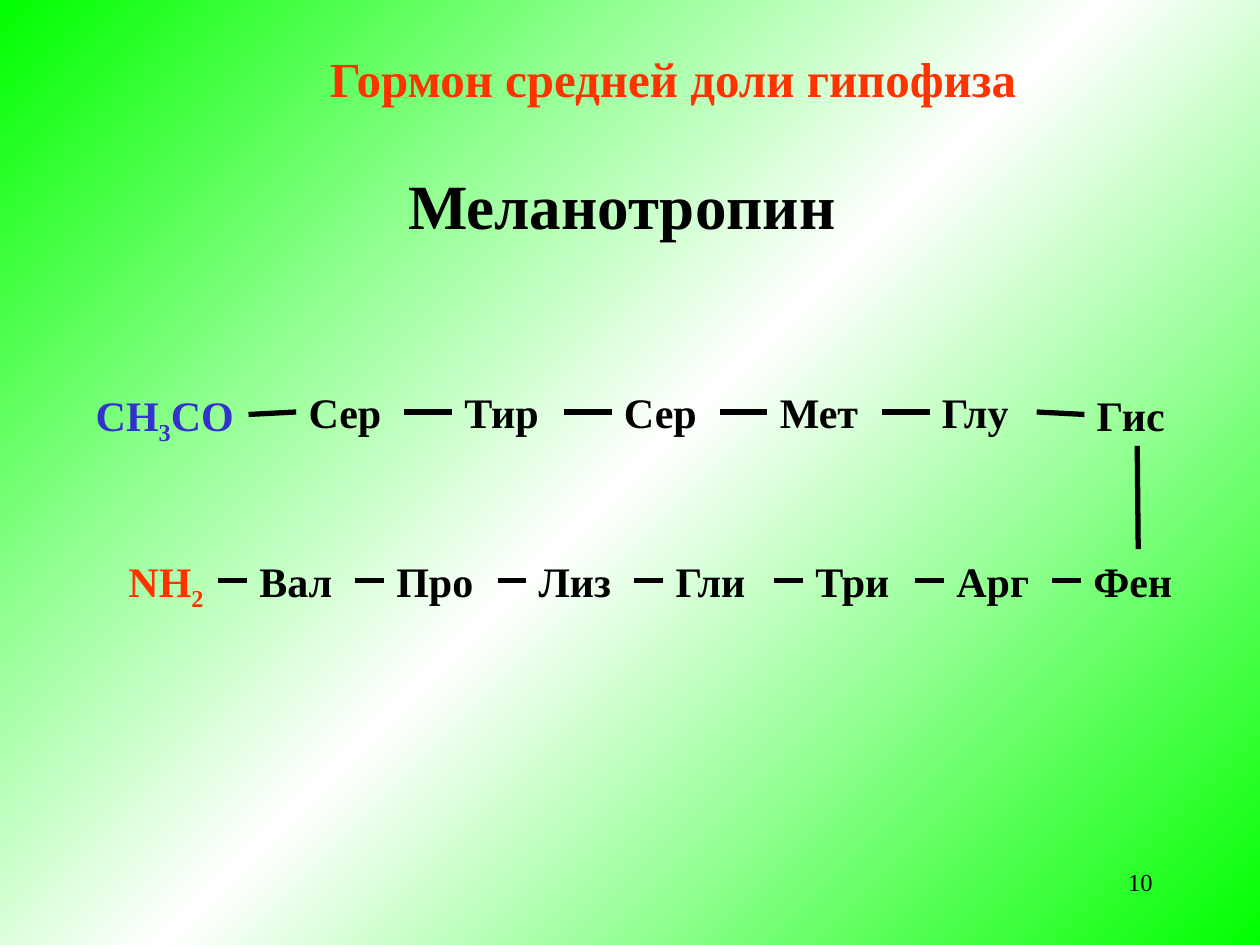
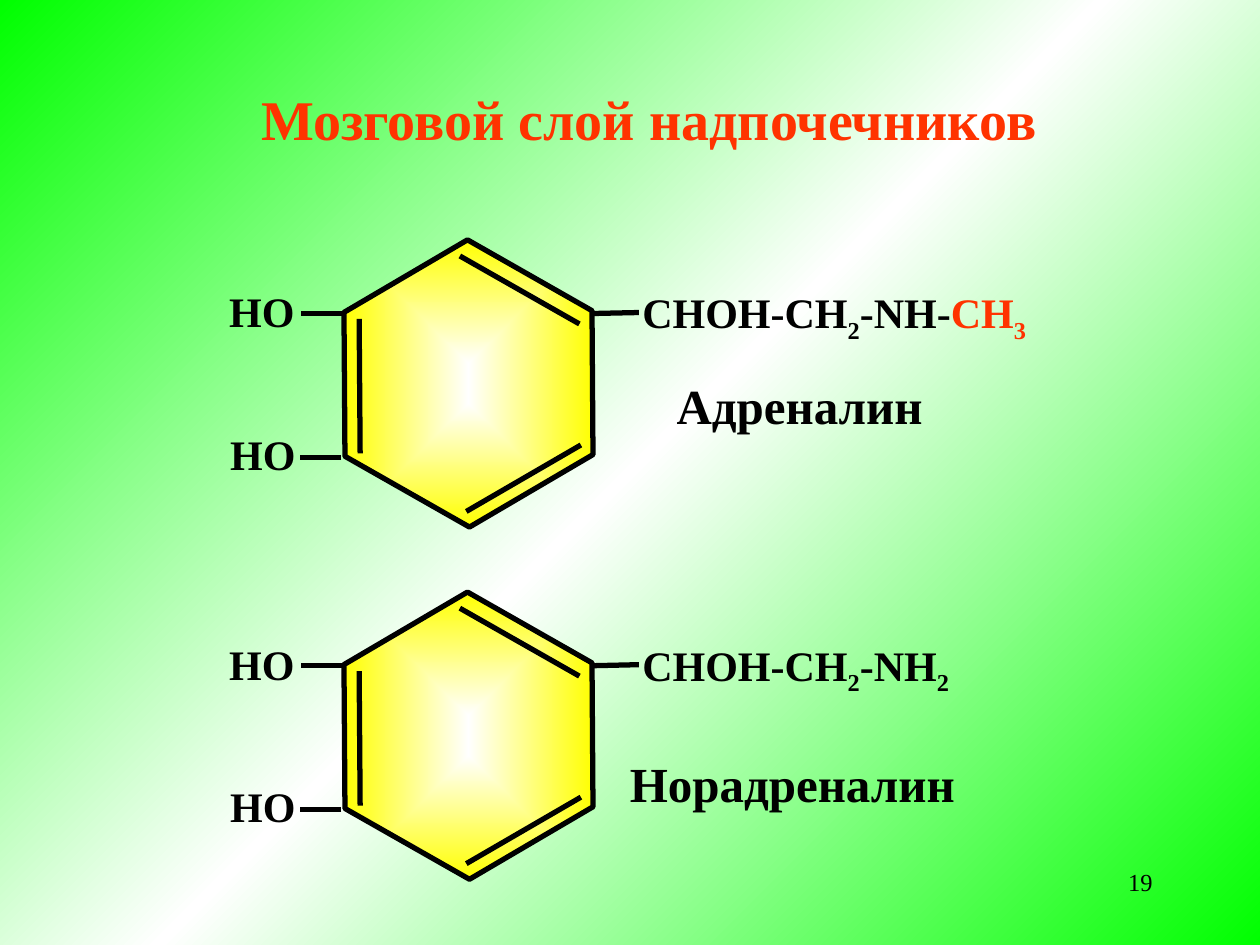
"""Build two slides on hormones: the melanotropin chain and the adrenal medulla hormones."""
from copy import deepcopy
from itertools import pairwise

from lxml.etree import SubElement
from pptx import Presentation
from pptx.dml.color import RGBColor
from pptx.enum.shapes import MSO_CONNECTOR, MSO_SHAPE
from pptx.enum.text import MSO_ANCHOR, MSO_AUTO_SIZE, PP_ALIGN
from pptx.oxml.ns import qn
from pptx.util import Cm, Pt

FONT = "Times New Roman"
BLACK, RED, BLUE = "000000", "FF3300", "3333CC"
GREEN, WHITE, YELLOW = "00FF00", "FFFFFF", "FFFF00"
rgb = RGBColor.from_string


def add_text(s, box, parts, size=24, bold=True, align=PP_ALIGN.LEFT, sp=None):
    """Write coloured parts into a new text box or a given placeholder; digits in formulas are subscripts."""
    fixed = sp is not None or not bold
    if sp is None:
        sp = s.shapes.add_textbox(0, 0, 0, 0)
    sp.left, sp.top, sp.width, sp.height = [Cm(v) for v in box]
    tf = sp.text_frame
    tf.word_wrap = fixed
    tf.auto_size = MSO_AUTO_SIZE.NONE if fixed else MSO_AUTO_SIZE.SHAPE_TO_FIT_TEXT
    p = tf.paragraphs[0]
    p.alignment = align
    for text, color in parts:
        r = p.add_run()
        r.text = text
        r.font.name, r.font.size, r.font.bold = FONT, Pt(size), bold
        r.font.color.rgb = rgb(color)
        if bold and text.isdigit():
            r.font._element.set("baseline", "-25000")
    return sp


def add_line(s, x1, y1, x2, y2):
    """Draw a black bond without a shadow."""
    c = s.shapes.add_connector(MSO_CONNECTOR.STRAIGHT, Cm(x1), Cm(y1), Cm(x2), Cm(y2))
    c.line.color.rgb = rgb(BLACK)
    c.line.width = Pt(3)
    SubElement(c._element.spPr, qn("a:effectLst"))
    return c


prs = Presentation()
prs.slide_width, prs.slide_height = Cm(25.4), Cm(19.05)

master = prs.slide_master
fill = master.background.fill
fill.gradient()
fill.gradient_angle = 315
stops = master.element.xpath(".//p:bg//a:gsLst")[0]
stops.append(deepcopy(stops[-1]))
for stop, color, pos in zip(fill.gradient_stops, (GREEN, WHITE, GREEN), (0, 0.5, 1)):
    stop.color.rgb = rgb(color)
    stop.position = pos

slides = []
for title, color, size, left, top, number in (
    ("Меланотропин ", BLACK, 36, 1.9, 2.54, "10"),
    ("Мозговой слой надпочечников", RED, 32, 2.29, 0.79, "19"),
):
    s = prs.slides.add_slide(prs.slide_layouts[5])
    sp = add_text(s, (left, top, 21.59, 3.17), [(title, color)], size,
                  align=PP_ALIGN.CENTER, sp=s.shapes.title)
    sp.text_frame.vertical_anchor = MSO_ANCHOR.MIDDLE
    add_text(s, (18.21, 17.35, 5.28, 1.27), [(number, BLACK)], 14, False, PP_ALIGN.RIGHT)
    slides.append(s)
chain, rings = slides

add_text(chain, (6.4, 0.86, 14.5, 1.45), [("Гормон средней доли гипофиза", RED)], 28)

acetyl = [("CH", BLUE), ("3", BLUE), ("CO", BLUE)]
amide = [("NH", RED), ("2", RED)]
upper = [("Сер", 2.18), ("Тир", 2.26), ("Сер", 2.18), ("Мет", 2.31), ("Глу", 2.16), ("Гис", 2.13)]
lower = [("Вал", 2.18), ("Про", 2.29), ("Лиз", 2.18), ("Гли", 2.24), ("Три", 2.26),
         ("Арг", 2.18), ("Фен", 2.31)]
ends = []
for left, top, gap, group, group_width, acids in (
    (1.68, 7.67, 0.96, acetyl, 3.33, upper),
    (2.34, 11.07, 0.58, amide, 2.06, lower),
):
    row = []
    residues = [(group, group_width)] + [([(name, BLACK)], w) for name, w in acids]
    for parts, width in residues:
        drop = 0.05 if parts == acetyl or parts[0][0] == "Гис" else 0
        row.append(add_text(chain, (left, top + drop, width, 1.27), parts))
        left += width + gap
    for a, b in pairwise(row):
        c = add_line(chain, 0, 0, 0, 0)
        c.begin_connect(a, 3)
        c.end_connect(b, 1)
    ends.append(row[-1])
c = add_line(chain, 0, 0, 0, 0)
c.begin_connect(ends[0], 2)
c.end_connect(ends[1], 0)

bonds = [
    (9.4, 10.31, 11.71, 8.97),
    (11.68, 6.53, 9.27, 5.16),
    (7.24, 6.43, 7.26, 9.14),
    (11.94, 6.32, 12.88, 6.3),
    (6.91, 6.32, 6.07, 6.32),
    (6.88, 9.22, 6.05, 9.22),
]
side = [("СНОН-СН", BLACK), ("2", BLACK)]
for dy, tail, width, name, name_box in (
    (0, [("-NH-", BLACK), ("CH", RED), ("3", RED)], 8.31, "Адреналин", (13.39, 7.44, 5.46, 1.45)),
    (7.1, [("-NH", BLACK), ("2", BLACK)], 6.76, "Норадреналин", (12.45, 15.06, 7.06, 1.45)),
):
    sp = rings.shapes.add_shape(MSO_SHAPE.HEXAGON, Cm(6.55), Cm(5.23 + dy), Cm(5.79), Cm(5))
    sp.rotation = 269.6
    sp.adjustments[0], sp.adjustments[1] = 0.289, 1.155
    sp.shadow.inherit = False
    sp.line.color.rgb = rgb(BLACK)
    sp.line.width = Pt(3)
    sp.fill.gradient()
    for stop, color, pos in zip(sp.fill.gradient_stops, (WHITE, YELLOW), (0, 1)):
        stop.color.rgb = rgb(color)
        stop.position = pos
    lin = sp._element.xpath(".//a:gradFill/a:lin")[0]
    grad = lin.getparent()
    grad.remove(lin)
    shade = SubElement(grad, qn("a:path"), {"path": "shape"})
    SubElement(shade, qn("a:fillToRect"), {edge: "50000" for edge in "ltrb"})

    for x1, y1, x2, y2 in bonds:
        add_line(rings, x1, y1 + dy, x2, y2 + dy)
    add_text(rings, (12.7, 5.66 + dy, width, 1.27), side + tail)
    for left, top in ((4.37, 5.64), (4.39, 8.51)):
        add_text(rings, (left, top + dy, 1.83, 1.27), [("HO", BLACK)])
    add_text(rings, name_box, [(name, BLACK)], 28)

prs.save("out.pptx")
